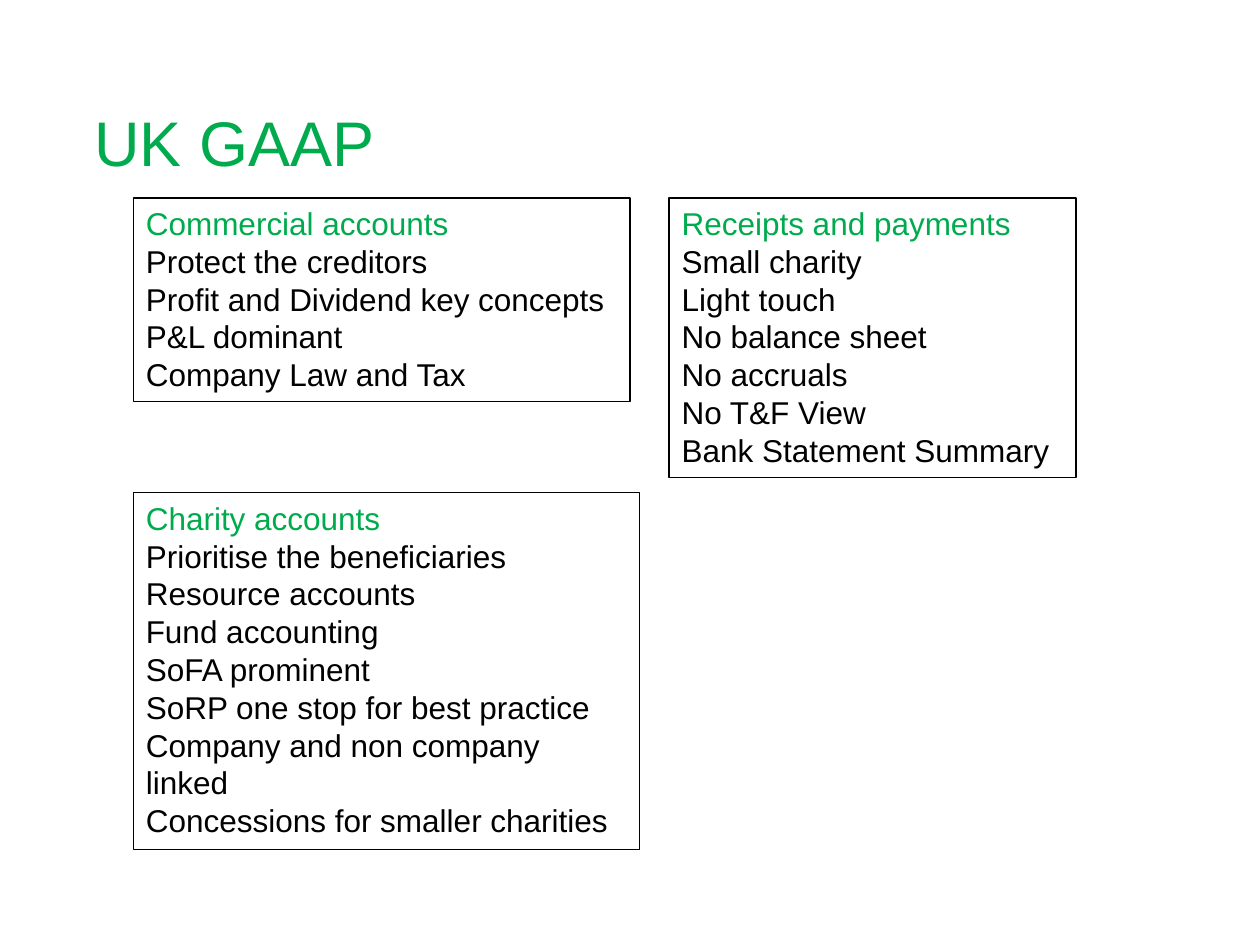
from dataclasses import dataclass

from pptx import Presentation
from pptx.dml.color import RGBColor
from pptx.enum.shapes import MSO_SHAPE
from pptx.enum.text import MSO_ANCHOR, MSO_AUTO_SIZE, PP_ALIGN
from pptx.util import Cm, Pt

RECT = MSO_SHAPE.RECTANGLE
TOP, MIDDLE = MSO_ANCHOR.TOP, MSO_ANCHOR.MIDDLE
GROW = MSO_AUTO_SIZE.SHAPE_TO_FIT_TEXT
LEFT = PP_ALIGN.LEFT


@dataclass(frozen=True)
class Theme:
    font: str = "Arial"
    green: RGBColor = RGBColor(0x00, 0xAB, 0x4E)
    black: RGBColor = RGBColor(0, 0, 0)
    title: Pt = Pt(36)
    body: Pt = Pt(18)
    line: Pt = Pt(0.75)


THEME = Theme()
COL_1, COL_2 = 2.69, 13.49
ROW_1, ROW_2 = 3.99, 9.93

# Left, top, width and height in cm, then the heading and its points
PANELS = [
    ((COL_1, ROW_1, 10.01, 4.11), "Commercial accounts", [
        "Protect the creditors",
        "Profit and Dividend key concepts",
        "P&L dominant",
        "Company Law and Tax",
    ]),
    ((COL_1, ROW_2, 10.21, 7.19), "Charity accounts", [
        "Prioritise the beneficiaries",
        "Resource accounts",
        "Fund accounting",
        "SoFA prominent",
        "SoRP one stop for best practice",
        "Company and non company linked",
        "Concessions for smaller charities",
    ]),
    ((COL_2, ROW_1, 8.2, 5.64), "Receipts and payments", [
        "Small charity",
        "Light touch",
        "No balance sheet",
        "No accruals",
        "No T&F View",
        "Bank Statement Summary",
    ]),
]


def style(item, values):
    for name, value in values.items():
        setattr(item, name, value)


def write(para, text, size, color):
    para.alignment = LEFT
    run = para.add_run()
    run.text = text
    style(run.font, {"name": THEME.font, "size": size})
    run.font.color.rgb = color


def add_title(slide, text):
    box = slide.shapes.add_textbox(Cm(1.9), Cm(0.79), Cm(22.66), Cm(4.11))
    frame = box.text_frame
    style(frame, {
        "word_wrap": True, "vertical_anchor": MIDDLE,
        "margin_left": 0, "margin_right": 0,
        "margin_top": 0, "margin_bottom": 0,
    })
    write(frame.paragraphs[0], text, THEME.title, THEME.green)


def add_panel(slide, place, head, points):
    """Add an outlined box with a green heading above its points."""
    box = slide.shapes.add_shape(RECT, *map(Cm, place))
    box.shadow.inherit = False
    box.fill.background()
    box.line.color.rgb = THEME.black
    box.line.width = THEME.line
    frame = box.text_frame
    style(frame, {
        "word_wrap": True, "vertical_anchor": TOP, "auto_size": GROW,
    })
    write(frame.paragraphs[0], head, THEME.body, THEME.green)
    for point in points:
        write(frame.add_paragraph(), point, THEME.body, THEME.black)


def main():
    deck = Presentation()
    style(deck, {"slide_width": Cm(25.4), "slide_height": Cm(19.05)})
    slide = deck.slides.add_slide(deck.slide_layouts[6])
    add_title(slide, "UK GAAP")
    for panel in PANELS:
        add_panel(slide, *panel)
    deck.save("out.pptx")


if __name__ == "__main__":
    main()
